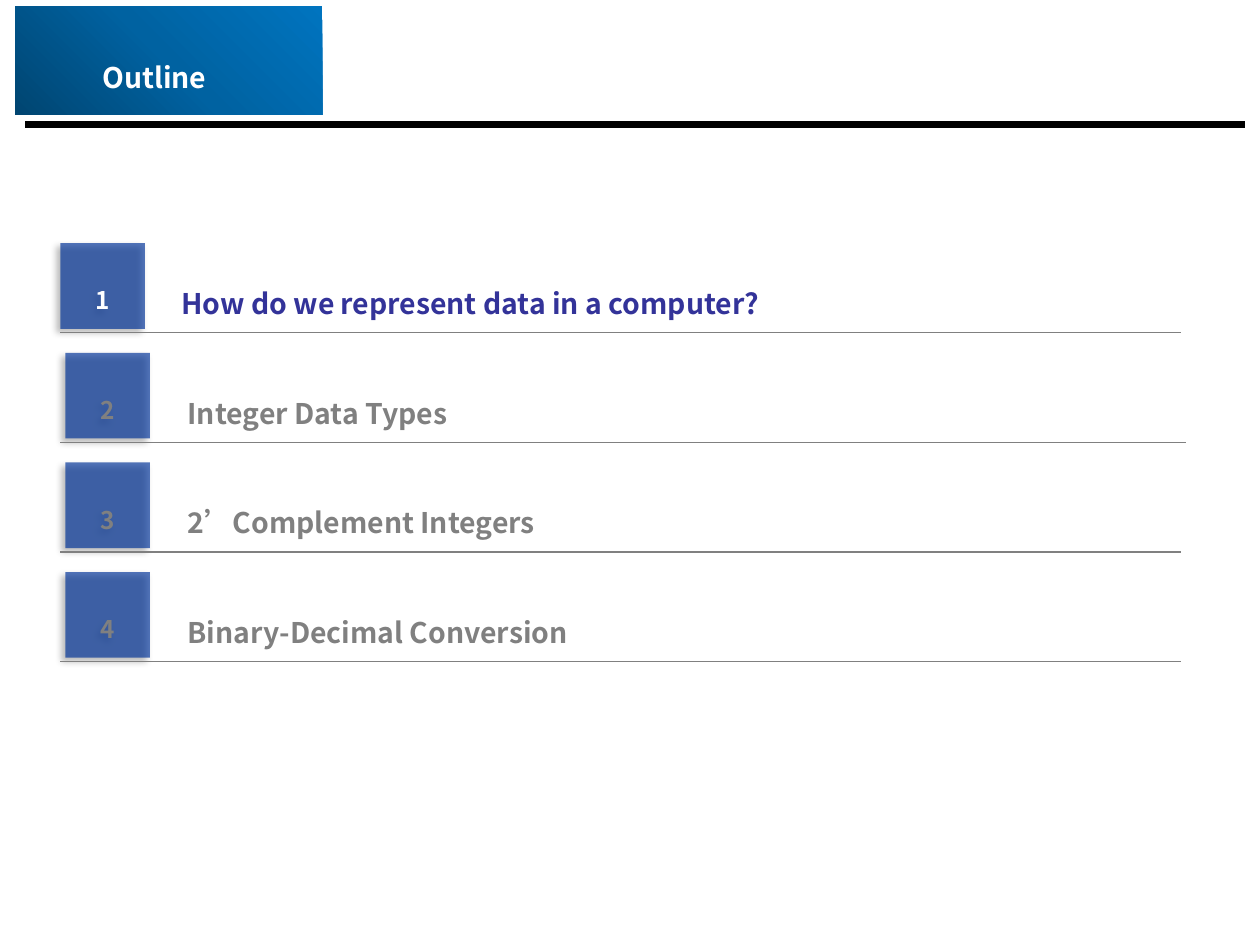
import pptx
import pptx.util
import pptx.dml.color
import pptx.enum.shapes
import pptx.enum.text
import pptx.oxml
import pptx.oxml.ns

Inches = pptx.util.Inches
Pt = pptx.util.Pt
RECTANGLE = pptx.enum.shapes.MSO_SHAPE.RECTANGLE
ALIGN = pptx.enum.text.PP_ALIGN

# Content
TITLE = "Outline"
TOPICS = [
    "How do we represent data in a computer?",
    "Integer Data Types",
    "2’Complement Integers",
    "Binary-Decimal Conversion",
]
CURRENT = 0
DOUBLE_RULED = 1

# Style
FONT = "Noto Sans CJK SC"
WHITE, GRAY, NAVY, INDIGO = "FFFFFF", "808080", "003399", "333399"
GRADIENT = [(0, "004571"), (50, "0062A1"), (100, "0074BF")]
ROW_TOP, ROW_PITCH = 1.93, 0.87
NAMESPACE = pptx.oxml.ns.nsdecls("a")


def color(value):
    return pptx.dml.color.RGBColor.from_string(value)


def add_xml(parent, xml):
    element = pptx.oxml.parse_xml(xml)
    parent.append(element)
    return element


def add_box(page, left, top, width, height, fill):
    box = page.shapes.add_shape(
        RECTANGLE, Inches(left), Inches(top), Inches(width), Inches(height))
    box.shadow.inherit = False
    box.line.fill.background()
    box.fill.solid()
    box.fill.fore_color.rgb = color(fill)
    return box


def write(box, text, size, ink, align, margins=(0, 0), wrap=True):
    frame = box.text_frame
    frame.text = text
    frame.word_wrap = wrap
    frame.vertical_anchor = pptx.enum.text.MSO_ANCHOR.MIDDLE
    frame.margin_left = frame.margin_right = Inches(margins[0])
    frame.margin_top = frame.margin_bottom = Inches(margins[1])
    para = frame.paragraphs[0]
    para.alignment = align
    span = para.runs[0]
    span.font.size = Pt(size)
    span.font.bold = True
    span.font.name = FONT
    span.font.color.rgb = color(ink)
    # Lettering is set as subscript, with the same East Asian font
    properties = span.font._element
    properties.set("lang", "zh-CN")
    properties.set("baseline", "-25000")
    add_xml(properties, f'<a:ea {NAMESPACE} typeface="{FONT}"/>')
    return para


def add_rule(page, left, right, y, ink, weight):
    rule = page.shapes.add_connector(
        pptx.enum.shapes.MSO_CONNECTOR.STRAIGHT,
        Inches(left), Inches(y), Inches(right), Inches(y))
    rule.line.color.rgb = color(ink)
    rule.line.width = Pt(weight)
    add_xml(rule._element.spPr, f"<a:effectLst {NAMESPACE}/>")


def add_header(page):
    add_rule(page, 0.2, 9.88, 0.99, "000000", 3.75)
    banner = add_box(page, 0.12, 0.05, 2.44, 0.86, GRADIENT[0][1])
    stops = "".join(
        f'<a:gs pos="{place * 1000}"><a:srgbClr val="{value}"/></a:gs>'
        for place, value in GRADIENT)
    properties = banner._element.spPr
    solid = properties.find(pptx.oxml.ns.qn("a:solidFill"))
    properties.replace(solid, pptx.oxml.parse_xml(
        f'<a:gradFill {NAMESPACE} rotWithShape="1"><a:gsLst>{stops}</a:gsLst>'
        '<a:path path="circle"><a:fillToRect t="100000" r="100000"/></a:path>'
        '</a:gradFill>'))
    title = page.shapes.add_textbox(
        Inches(0.12), Inches(0.25), Inches(2.21), Inches(0.47))
    write(title, TITLE, 28, WHITE, ALIGN.CENTER)


def add_number(page, left, top, number, ink):
    tile = add_box(page, left, top, 0.67, 0.68, NAVY)
    properties = tile._element.spPr
    fill = properties.find(pptx.oxml.ns.qn("a:solidFill"))
    add_xml(fill[0], f'<a:alpha {NAMESPACE} val="67000"/>')
    effects = properties.find(pptx.oxml.ns.qn("a:effectLst"))
    add_xml(effects,
            f'<a:outerShdw {NAMESPACE} blurRad="{Pt(4)}" dist="{Pt(3)}" '
            'dir="8100000" algn="tr" rotWithShape="0"><a:srgbClr val="000000">'
            '<a:alpha val="40000"/></a:srgbClr></a:outerShdw>')
    write(tile, str(number), 24, ink, ALIGN.CENTER, wrap=False)


def add_topic(page, index, topic):
    current = index == CURRENT
    top = ROW_TOP + index * ROW_PITCH
    left, width = (1.33, 8.55) if current else (1.38, 8.03)
    label = add_box(page, left, top + 0.05, width, 0.59, WHITE)
    para = write(label, topic, 28, INDIGO if current else GRAY,
                 ALIGN.LEFT, (0.11, 0.06))
    para.space_before = Pt(6)
    add_number(page, 0.48 if current else 0.52, top, index + 1,
               WHITE if current else GRAY)
    for shift in (0, 0.04) if index == DOUBLE_RULED else (0,):
        add_rule(page, 0.48 + shift, 9.37 + shift, top + 0.71, GRAY, 0.75)


def main():
    deck = pptx.Presentation()
    deck.slide_width, deck.slide_height = Inches(10), Inches(7.5)
    page = deck.slides.add_slide(deck.slide_layouts[6])
    add_header(page)
    for index, topic in enumerate(TOPICS):
        add_topic(page, index, topic)
    deck.save("out.pptx")


if __name__ == "__main__":
    main()
